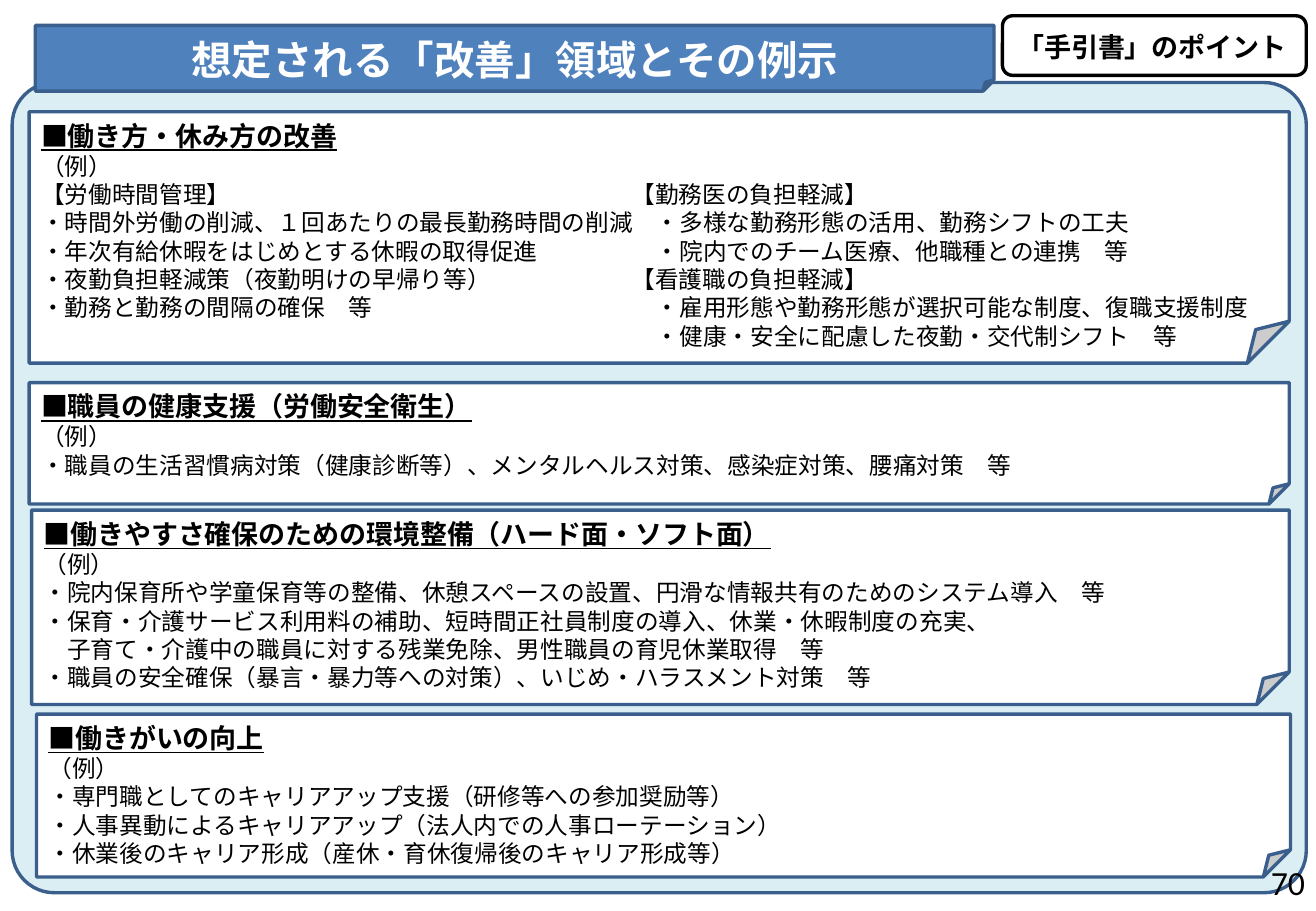
import pptx
import pptx.util
import pptx.dml.color
import pptx.enum.shapes
import pptx.enum.text
import pptx.oxml.ns
import lxml.etree

TITLE = "想定される「改善」領域とその例示"
CALLOUT = "「手引書」のポイント"
PAGE = "70"

HEAD_TAB, ITEM_TAB = 4.86, 5.06

CARDS = [
    ((0.24, 0.92, 10.37, 2.07), "■働き方・休み方の改善", [
        ("（例）", None),
        ("【労働時間管理】\t【勤務医の負担軽減】", HEAD_TAB),
        ("・時間外労働の削減、１回あたりの最長勤務時間の削減\t・多様な勤務形態の活用、勤務シフトの工夫", ITEM_TAB),
        ("・年次有給休暇をはじめとする休暇の取得促進\t・院内でのチーム医療、他職種との連携　等", ITEM_TAB),
        ("・夜勤負担軽減策（夜勤明けの早帰り等）\t【看護職の負担軽減】", HEAD_TAB),
        ("・勤務と勤務の間隔の確保　等\t・雇用形態や勤務形態が選択可能な制度、復職支援制度", ITEM_TAB),
        ("\t・健康・安全に配慮した夜勤・交代制シフト　等", ITEM_TAB),
    ]),
    ((0.24, 3.15, 10.37, 1), "■職員の健康支援（労働安全衛生）", [
        ("（例）", None),
        ("・職員の生活習慣病対策（健康診断等）、メンタルヘルス対策、感染症対策、腰痛対策　等", None),
    ]),
    ((0.26, 4.2, 10.35, 1.6), "■働きやすさ確保のための環境整備（ハード面・ソフト面）", [
        ("（例）", None),
        ("・院内保育所や学童保育等の整備、休憩スペースの設置、円滑な情報共有のためのシステム導入　等", None),
        ("・保育・介護サービス利用料の補助、短時間正社員制度の導入、休業・休暇制度の充実、", None),
        ("　子育て・介護中の職員に対する残業免除、男性職員の育児休業取得　等", None),
        ("・職員の安全確保（暴言・暴力等への対策）、いじめ・ハラスメント対策　等", None),
    ]),
    ((0.3, 5.88, 10.32, 1.34), "■働きがいの向上", [
        ("（例）", None),
        ("・専門職としてのキャリアアップ支援（研修等への参加奨励等）", None),
        ("・人事異動によるキャリアアップ（法人内での人事ローテーション）", None),
        ("・休業後のキャリア形成（産休・育休復帰後のキャリア形成等）", None),
    ]),
]

COLORS = {"panel": "DBEEF4", "title": "4F81BD", "edge": "3A5F8C", "white": "FFFFFF", "black": "000000"}
JP_FONT = "Noto Sans CJK JP"

Inches = pptx.util.Inches
Pt = pptx.util.Pt
SHAPE = pptx.enum.shapes.MSO_SHAPE
ALIGN = pptx.enum.text.PP_ALIGN
ANCHOR = pptx.enum.text.MSO_ANCHOR
qn = pptx.oxml.ns.qn


def rgb(name):
    return pptx.dml.color.RGBColor.from_string(COLORS[name])


def add_box(s, kind, at, fill, edge="edge", adjust=()):
    sp = s.shapes.add_shape(kind, *map(Inches, at))
    sp.shadow.inherit = False
    sp.fill.solid()
    sp.fill.fore_color.rgb = rgb(fill)
    sp.line.color.rgb = rgb(edge)
    sp.line.width = Pt(2)
    for i, value in enumerate(adjust):
        sp.adjustments[i] = value
    return sp


def set_frame(sp, anchor):
    tf = sp.text_frame
    tf.word_wrap = True
    tf.auto_size = pptx.enum.text.MSO_AUTO_SIZE.NONE
    tf.vertical_anchor = anchor
    return tf


def write(p, text, size=14, color="black", bold=False, underline=False,
          align=ALIGN.LEFT, font=JP_FONT, spacing=None, tab=None):
    p.alignment = align
    if spacing:
        p.line_spacing = Pt(spacing)
    if tab:
        tabs = lxml.etree.SubElement(p._p.get_or_add_pPr(), qn("a:tabLst"))
        lxml.etree.SubElement(tabs, qn("a:tab"), pos=str(Inches(tab)), algn="l")
    r = p.add_run()
    r.text = text
    r.font.size = Pt(size)
    r.font.bold = bold
    r.font.underline = underline
    r.font.color.rgb = rgb(color)
    r.font.name = font
    lxml.etree.SubElement(r._r.get_or_add_rPr(), qn("a:ea"), typeface=font)


def main():
    prs = pptx.Presentation()
    prs.slide_width, prs.slide_height = Inches(10.83), Inches(7.5)
    s = prs.slides.add_slide(prs.slide_layouts[5])

    add_box(s, SHAPE.ROUNDED_RECTANGLE, (0.1, 0.68, 10.65, 6.67), "panel", adjust=[0.052])
    add_box(s, SHAPE.FOLDED_CORNER, (0.29, 0.21, 7.89, 0.54), "title")

    title = s.shapes.title
    title.left, title.top, title.width, title.height = map(Inches, (0.29, 0.22, 7.89, 0.54))
    s.shapes._spTree.append(title._element)
    write(set_frame(title, ANCHOR.MIDDLE).paragraphs[0], TITLE, size=24, color="white",
          bold=True, align=ALIGN.CENTER, spacing=28.8)

    for at, heading, lines in CARDS:
        tf = set_frame(add_box(s, SHAPE.FOLDED_CORNER, at, "white"), ANCHOR.TOP)
        write(tf.paragraphs[0], heading, size=16, bold=True, underline=True, spacing=20)
        for text, tab in lines:
            write(tf.add_paragraph(), text, spacing=16.8, tab=tab)

    callout = add_box(s, SHAPE.ROUNDED_RECTANGULAR_CALLOUT, (8.25, 0.13, 2.5, 0.49),
                      "white", edge="black", adjust=[-0.5, -0.12, 0.17])
    write(set_frame(callout, ANCHOR.MIDDLE).paragraphs[0], CALLOUT, size=16, bold=True, spacing=20)

    number = s.shapes.add_textbox(*map(Inches, (8.31, 7.06, 2.53, 0.4)))
    write(set_frame(number, ANCHOR.MIDDLE).paragraphs[0], PAGE, size=20, align=ALIGN.RIGHT, font="Calibri")

    prs.save("out.pptx")


if __name__ == "__main__":
    main()
